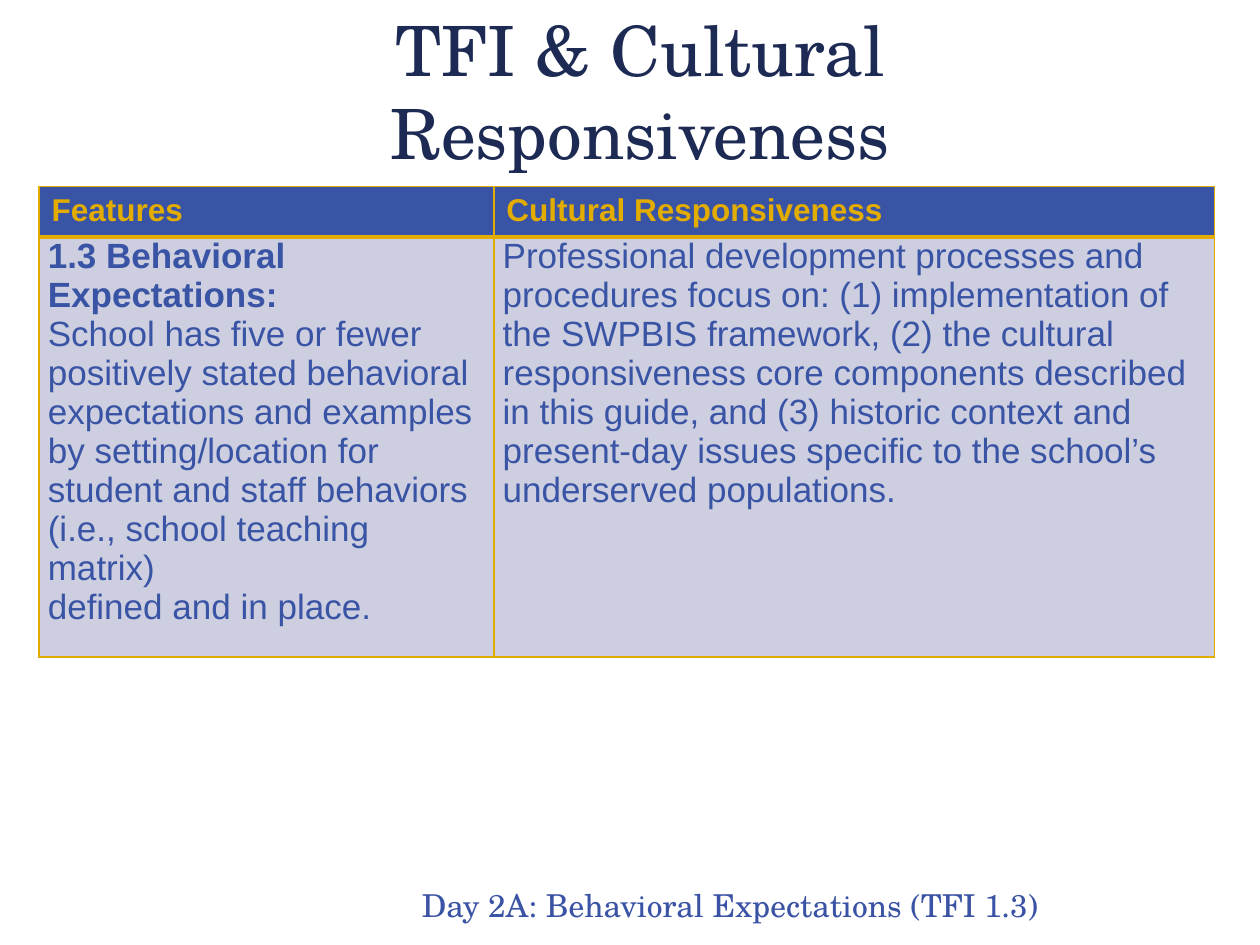
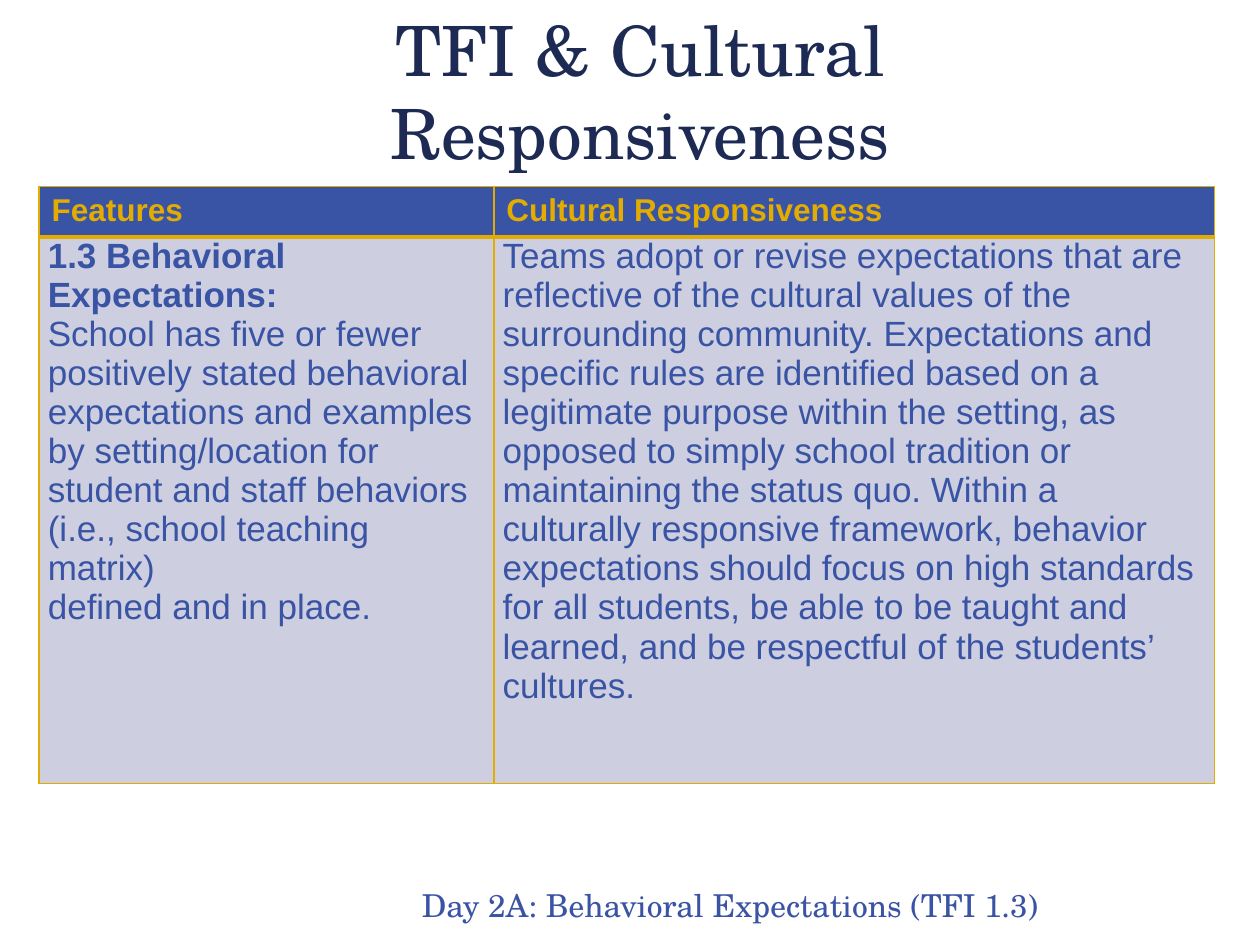
from lxml.etree import SubElement
from pptx import Presentation
from pptx.dml.color import RGBColor
from pptx.enum.text import MSO_ANCHOR as Anchor, MSO_AUTO_SIZE as AutoSize, PP_ALIGN as Align
from pptx.oxml.ns import qn
from pptx.util import Inches, Pt

TITLE = "TFI & Cultural Responsiveness"
FOOTER = "Day 2A: Behavioral Expectations (TFI 1.3)"
HEADINGS = ["Features", "Cultural Responsiveness"]
FEATURE = [
    ("1.3 Behavioral Expectations:", True),
    ("School has five or fewer positively stated behavioral expectations and examples "
     "by setting/location for student and staff behaviors (i.e., school teaching matrix)", False),
    ("defined and in place.", False),
]
RESPONSES = [
    ("Professional development processes and procedures focus on: (1) implementation of "
     "the SWPBIS framework, (2) the cultural responsiveness core components described in "
     "this guide, and (3) historic context and present-day issues specific to the school’s "
     "underserved populations.", 3.2),
    ("Teams adopt or revise expectations that are reflective of the cultural values of the "
     "surrounding community. Expectations and specific rules are identified based on a "
     "legitimate purpose within the setting, as opposed to simply school tradition or "
     "maintaining the status quo. Within a culturally responsive framework, behavior "
     "expectations should focus on high standards for all students, be able to be taught "
     "and learned, and be respectful of the students’ cultures.", 4.34),
]


def color(value):
    return RGBColor.from_string(value)


class SlideBuilder:
    """Holds the deck style and the slide being built."""

    serif, sans = "TeX Gyre Schola", "Arial"
    navy, blue, footer_blue = "1D2A53", "3A54A5", "3A53A5"
    gold, pale = "E2AC00", "CDCFE0"
    columns = (3.61, 1.91, 3.81)
    header_height = 0.38

    def __init__(self, deck):
        self.deck = deck
        self.slide = None

    def new_slide(self):
        self.slide = self.deck.slides.add_slide(self.deck.slide_layouts[5])

    def add_text(self, frame, lines, size, font, shade, align=Align.LEFT):
        for index, (text, bold) in enumerate(lines):
            para = frame.add_paragraph() if index else frame.paragraphs[0]
            para.alignment = align
            span = para.add_run()
            span.text = text
            span.font.size = Pt(size)
            span.font.name = font
            span.font.bold = bold
            span.font.color.rgb = color(shade)

    def title(self, text):
        box = self.slide.shapes.title
        box.left, box.top = Inches(1), Inches(0.32)
        box.width, box.height = Inches(8.16), Inches(0.79)
        frame = box.text_frame
        frame.auto_size = AutoSize.NONE
        frame.word_wrap = True
        frame.vertical_anchor = Anchor.MIDDLE
        self.add_text(frame, [(text, False)], 39.6, self.serif, self.navy, Align.CENTER)

    def footer(self, text):
        box = self.slide.shapes.add_textbox(Inches(1.48), Inches(6.69), Inches(6.86), Inches(0.64))
        frame = box.text_frame
        frame.word_wrap = True
        frame.vertical_anchor = Anchor.BOTTOM
        frame.margin_bottom = 0
        self.add_text(frame, [(text, False)], 18, self.serif, self.footer_blue, Align.RIGHT)

    def borders(self, cell, top, bottom):
        properties = cell._tc.get_or_add_tcPr()
        for side, width in (("L", 1), ("R", 1), ("T", top), ("B", bottom)):
            line = SubElement(properties, qn(f"a:ln{side}"), w=str(Pt(width)))
            fill = SubElement(line, qn("a:solidFill"))
            SubElement(fill, qn("a:srgbClr"), val=self.gold)

    def table(self, headings, body, body_height):
        heights = (self.header_height, body_height)
        table = self.slide.shapes.add_table(
            2, len(self.columns), Inches(0.31), Inches(1.48),
            Inches(sum(self.columns)), Inches(sum(heights))).table
        for column, width in zip(table.columns, self.columns):
            column.width = Inches(width)
        for row, height in zip(table.rows, heights):
            row.height = Inches(height)
        for index, (top, bottom, fill) in enumerate(((1, 3, self.blue), (3, 1, self.pale))):
            for cell in table.rows[index].cells:
                self.borders(cell, top, bottom)
                cell.fill.solid()
                cell.fill.fore_color.rgb = color(fill)
            table.cell(index, 1).merge(table.cell(index, 2))
        for index, (heading, lines) in enumerate(zip(headings, body)):
            self.add_text(table.cell(0, index).text_frame, [(heading, True)], 18, self.sans, self.gold)
            cell = table.cell(1, index)
            cell.margin_left = cell.margin_right = Inches(0.07)
            cell.margin_top = cell.margin_bottom = 0
            self.add_text(cell.text_frame, lines, 20, self.sans, self.blue)


def main():
    deck = Presentation()
    deck.slide_width, deck.slide_height = Inches(10), Inches(7.5)
    builder = SlideBuilder(deck)
    for response, body_height in RESPONSES:
        builder.new_slide()
        builder.footer(FOOTER)
        builder.table(HEADINGS, [FEATURE, [(response, False)]], body_height)
        builder.title(TITLE)
    deck.save("out.pptx")


if __name__ == "__main__":
    main()
